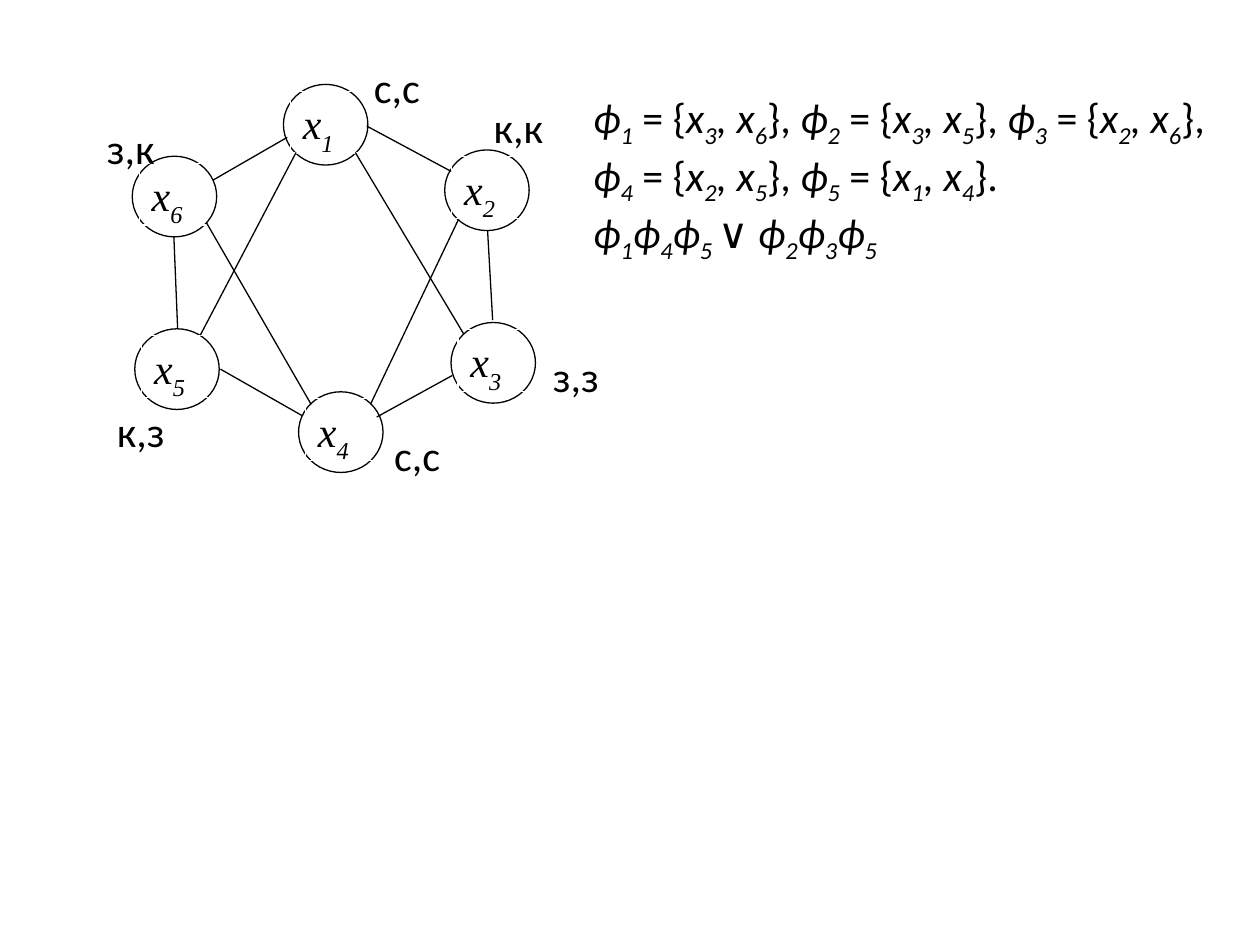
import pptx
import pptx.util
import pptx.dml.color
import pptx.enum.shapes
import pptx.enum.text
import pptx.oxml.ns
import lxml.etree

BLACK = pptx.dml.color.RGBColor(0, 0, 0)
WHITE = pptx.dml.color.RGBColor(255, 255, 255)

NODE_SIZE = (0.67, 0.64)
NAME_OFFSET = 0.055
NAME_SIZE = (0.65, 0.49)
LABEL_SIZE = (0.63, 0.5)
nodes = {
    "5": (1.07, 2.61),
    "1": (2.25, 0.67),
    "6": (1.05, 1.24),
    "3": (3.58, 2.56),
    "4": (2.37, 3.11),
    "2": (3.53, 1.19),
}
edges = [
    ((2.99, 3.31), (3.59, 2.98)),
    ((3.91, 2.54), (3.87, 1.83)),
    ((3.68, 2.65), (2.82, 1.21)),
    ((1.69, 1.43), (2.28, 1.09)),
    ((2.91, 1.00), (3.58, 1.36)),
    ((2.47, 3.21), (1.64, 1.77)),
    ((1.75, 2.93), (2.40, 3.30)),
    ((1.41, 2.61), (1.38, 1.88)),
    ((2.94, 3.21), (3.64, 1.74)),
    ((1.59, 2.66), (2.35, 1.21)),
]
node_colours = [
    ("с,с", 2.87, 0.44),
    ("с,с", 3.03, 3.36),
    ("к,к", 3.82, 0.76),
    ("к,з", 0.83, 3.17),
    ("з,з", 4.29, 2.73),
    ("з,к", 0.75, 0.92),
]
independent_pairs = ["36", "35", "26", "25", "14"]
colourings = [("1", "4", "5 "), ("2", "3", "5")]


def inches(*lengths):
    return [pptx.util.Inches(length) for length in lengths]


def add_run(paragraph, text, font, italic=False, baseline=0):
    run = paragraph.add_run()
    run.text = text
    run.font.size = pptx.util.Pt(24)
    run.font.name = font
    run.font.italic = italic
    run.font.color.rgb = BLACK
    if baseline:
        run.font._element.set("baseline", str(baseline * 1000))


def add_variable(paragraph, letter, index, font="Calibri", baseline=-25):
    add_run(paragraph, letter, font, True)
    add_run(paragraph, index, font, True, baseline)


def add_outlined(slide, kind, place, size, line_colour):
    shape = slide.shapes.add_shape(kind, *inches(*place, *size))
    shape.shadow.inherit = False
    shape.line.color.rgb = line_colour
    shape.line.width = pptx.util.Pt(0.75)
    return shape


def add_node(slide, index, place):
    kinds = pptx.enum.shapes.MSO_SHAPE
    circle = add_outlined(slide, kinds.OVAL, place, NODE_SIZE, BLACK)
    circle.fill.solid()
    circle.fill.fore_color.rgb = WHITE

    name_place = [coordinate + NAME_OFFSET for coordinate in place]
    name = add_outlined(slide, kinds.RECTANGLE, name_place, NAME_SIZE, WHITE)
    name.fill.background()
    frame = name.text_frame
    frame.vertical_anchor = pptx.enum.text.MSO_ANCHOR.TOP
    frame.paragraphs[0].alignment = pptx.enum.text.PP_ALIGN.LEFT
    add_variable(frame.paragraphs[0], "x", index, "Times New Roman", -30)


def add_edge(slide, start, end):
    edge = slide.shapes.add_connector(
        pptx.enum.shapes.MSO_CONNECTOR.STRAIGHT, *inches(*start, *end))
    edge.line.color.rgb = BLACK
    edge.line.width = pptx.util.Pt(0.75)
    lxml.etree.SubElement(edge._element.spPr, pptx.oxml.ns.qn("a:effectLst"))


def add_text_frame(slide, place, size):
    frame = slide.shapes.add_textbox(*inches(*place, *size)).text_frame
    frame.word_wrap = True
    return frame


def add_formulas(slide):
    frame = add_text_frame(slide, (4.61, 0.68), (5.39, 1.31))
    definitions = frame.paragraphs[0]
    for number, (first, second) in enumerate(independent_pairs, 1):
        add_variable(definitions, "ϕ", str(number))
        add_run(definitions, " = {", "Calibri")
        add_variable(definitions, "x", first)
        add_variable(definitions, ", x", second)
        closing = "}." if number == len(independent_pairs) else "}, "
        add_run(definitions, closing, "Calibri")

    disjunction = frame.add_paragraph()
    for position, colouring in enumerate(colourings):
        if position:
            add_run(disjunction, "∨ ", "Calibri")
        for index in colouring:
            add_variable(disjunction, "ϕ", index)


def main():
    deck = pptx.Presentation()
    deck.slide_width, deck.slide_height = inches(10, 7.5)
    slide = deck.slides.add_slide(deck.slide_layouts[6])
    for index, place in nodes.items():
        add_node(slide, index, place)
    for start, end in edges:
        add_edge(slide, start, end)
    add_formulas(slide)
    for colours, left, top in node_colours:
        label = add_text_frame(slide, (left, top), LABEL_SIZE)
        add_run(label.paragraphs[0], colours, "Calibri")
        label.word_wrap = False
        label.auto_size = pptx.enum.text.MSO_AUTO_SIZE.SHAPE_TO_FIT_TEXT
        label.paragraphs[0].alignment = pptx.enum.text.PP_ALIGN.LEFT
    deck.save("out.pptx")


if __name__ == "__main__":
    main()
